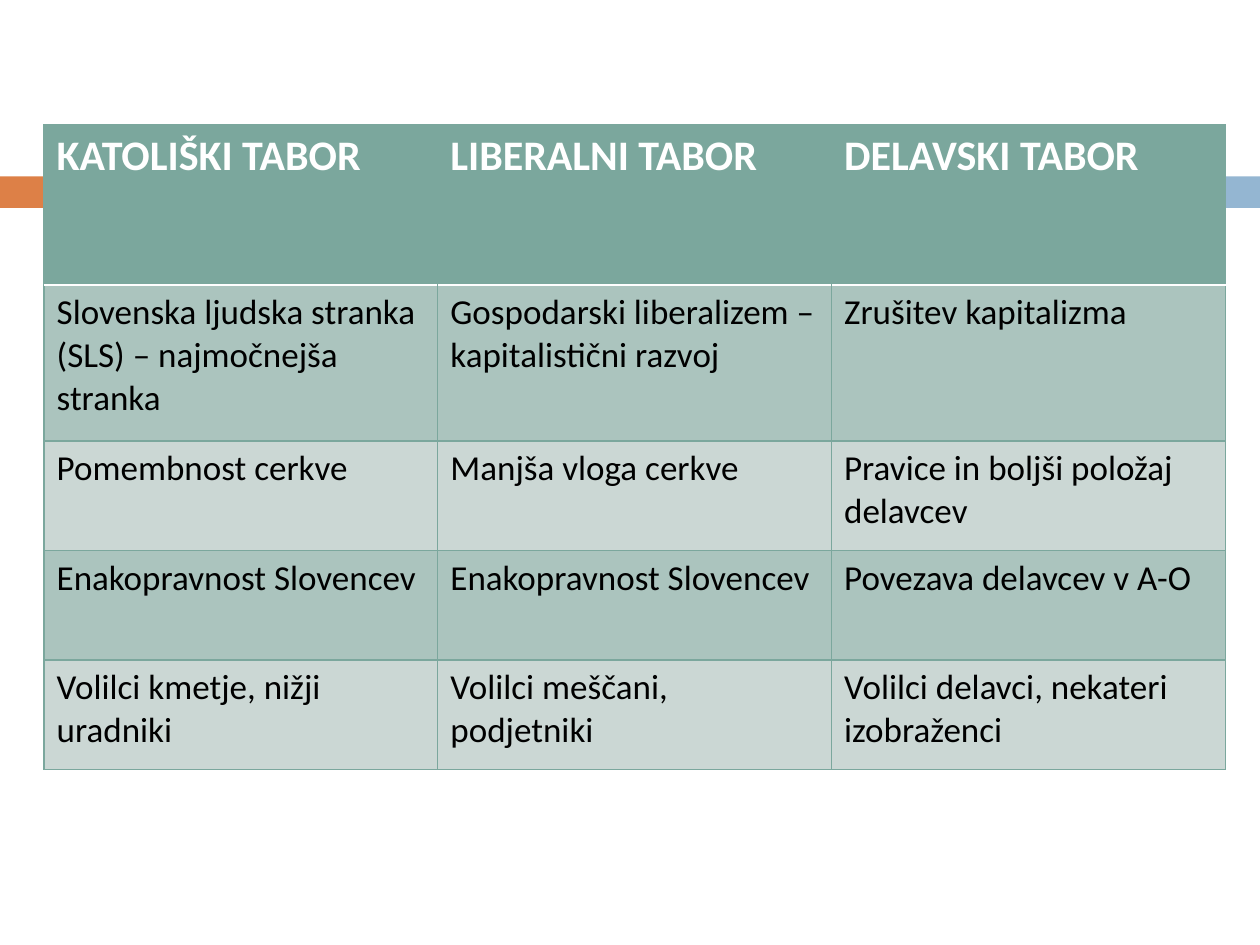
from typing import NamedTuple

from lxml import etree
from pptx import Presentation
from pptx.dml.color import RGBColor
from pptx.enum.shapes import MSO_SHAPE
from pptx.oxml.ns import qn
from pptx.util import Inches, Pt

RECT = MSO_SHAPE.RECTANGLE
WHITE = RGBColor(0xFF, 0xFF, 0xFF)
BLACK = RGBColor(0x00, 0x00, 0x00)
ORANGE = RGBColor(0xDD, 0x80, 0x47)
BLUE = RGBColor(0x94, 0xB6, 0xD2)
GREEN = RGBColor(0x7B, 0xA7, 0x9D)
DARK = RGBColor(0xAB, 0xC4, 0xBE)
PALE = RGBColor(0xCB, 0xD7, 0xD4)


class Band(NamedTuple):
    left: float
    width: float
    color: RGBColor


class Edge(NamedTuple):
    color: RGBColor
    width: float


class Look(NamedTuple):
    fill: RGBColor
    ink: RGBColor
    size: int
    bold: bool


BANDS = [Band(0, 0.58, ORANGE), Band(0.65, 9.35, BLUE)]
THIN = Edge(GREEN, 0.79)
RULE = Edge(WHITE, 1.5)
HEAD = Look(GREEN, WHITE, 24, True)
BODY = [Look(DARK, BLACK, 20, False), Look(PALE, BLACK, 20, False)]
HEIGHTS = [1.27, 1.24, 0.87, 0.87, 0.87]
COL = 3.125
ROWS = [
    ("KATOLIŠKI TABOR", "LIBERALNI TABOR", "DELAVSKI TABOR"),
    ("Slovenska ljudska stranka (SLS) – najmočnejša stranka",
     "Gospodarski liberalizem – kapitalistični razvoj",
     "Zrušitev kapitalizma"),
    ("Pomembnost cerkve", "Manjša vloga cerkve",
     "Pravice in boljši položaj delavcev"),
    ("Enakopravnost Slovencev", "Enakopravnost Slovencev",
     "Povezava delavcev v A-O"),
    ("Volilci kmetje, nižji uradniki", "Volilci meščani, podjetniki",
     "Volilci delavci, nekateri izobraženci"),
]


def draw_band(slide, band: Band) -> None:
    shape = slide.shapes.add_shape(
        RECT, Inches(band.left), Inches(1.4), Inches(band.width), Inches(0.25))
    shape.shadow.inherit = False
    shape.fill.solid()
    shape.fill.fore_color.rgb = band.color
    shape.line.fill.background()


def set_edge(cell, side: str, edge: Edge | None) -> None:
    props = cell._tc.get_or_add_tcPr()
    line = etree.SubElement(props, qn(f"a:ln{side}"))
    if edge is None:
        etree.SubElement(line, qn("a:noFill"))
        return
    line.set("w", str(int(Pt(edge.width))))
    fill = etree.SubElement(line, qn("a:solidFill"))
    etree.SubElement(fill, qn("a:srgbClr"), val=str(edge.color))


def fill_cell(cell, text: str, look: Look, edges: dict[str, Edge | None]) -> None:
    # Borders come before the fill in the cell properties
    for side, edge in edges.items():
        set_edge(cell, side, edge)
    cell.fill.solid()
    cell.fill.fore_color.rgb = look.fill
    cell.text = text
    font = cell.text_frame.paragraphs[0].font
    font.name = "Calibri"
    font.size = Pt(look.size)
    font.bold = look.bold
    font.color.rgb = look.ink


def draw_table(slide) -> None:
    count = len(ROWS[0])
    table = slide.shapes.add_table(
        len(ROWS), count, Inches(0.35), Inches(0.99),
        Inches(COL * count), Inches(sum(HEIGHTS))).table
    for col in table.columns:
        col.width = Inches(COL)
    for r, texts in enumerate(ROWS):
        table.rows[r].height = Inches(HEIGHTS[r])
        look = BODY[(r - 1) % 2] if r else HEAD
        for c, text in enumerate(texts):
            # The header has no inner lines and a white rule below
            edges = {
                "L": THIN if r or c == 0 else None,
                "R": THIN if r or c == count - 1 else None,
                "T": RULE if r == 1 else THIN,
                "B": THIN if r else RULE,
            }
            fill_cell(table.cell(r, c), text, look, edges)


def main() -> None:
    deck = Presentation()
    deck.slide_width, deck.slide_height = Inches(10), Inches(7.5)
    slide = deck.slides.add_slide(deck.slide_layouts[6])
    # Bands behind the table
    for band in BANDS:
        draw_band(slide, band)
    # Comparison of the three camps
    draw_table(slide)
    deck.save("out.pptx")


if __name__ == "__main__":
    main()
